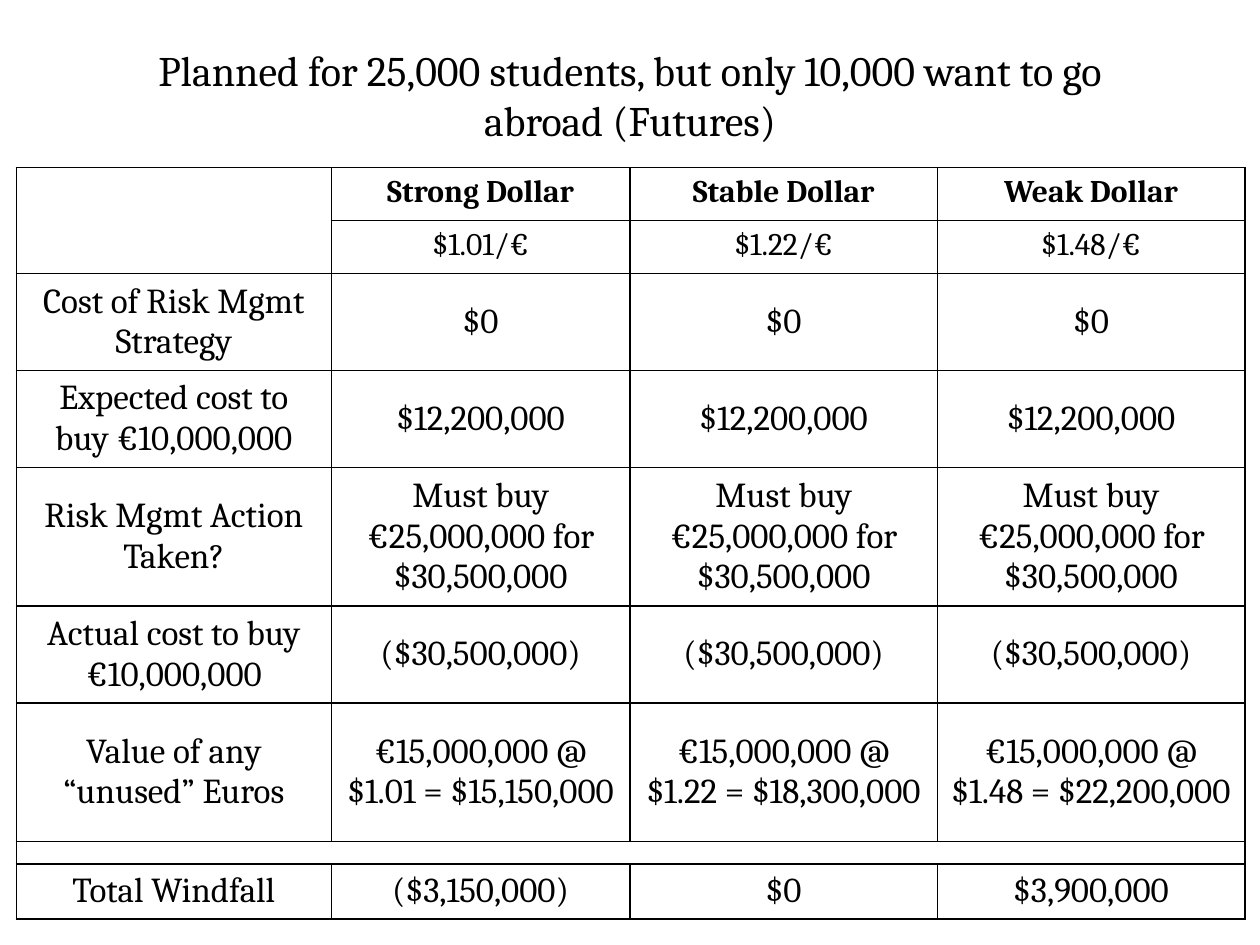
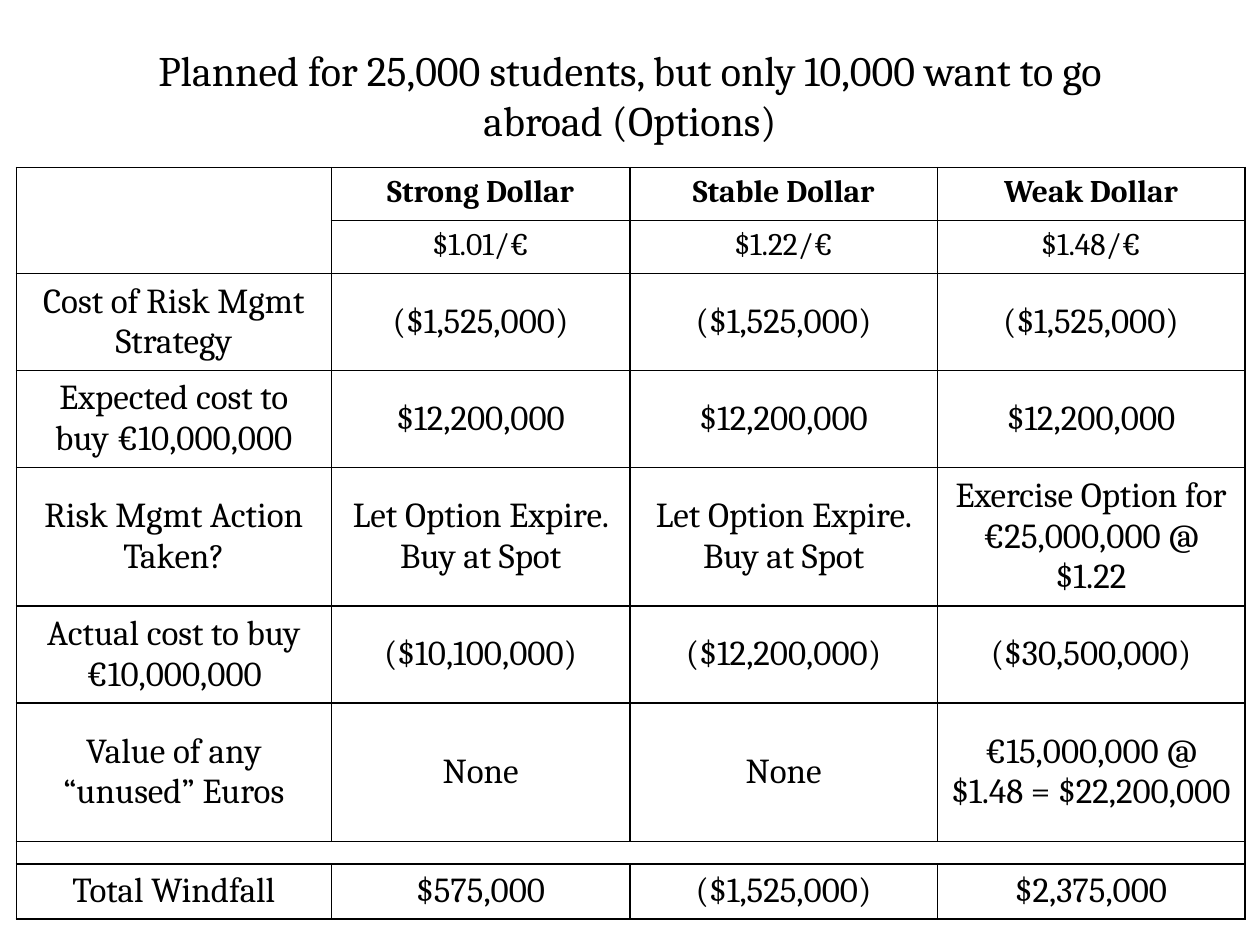
from lxml import etree
from pptx import Presentation
from pptx.dml.color import RGBColor
from pptx.enum.text import MSO_ANCHOR, PP_ALIGN
from pptx.oxml.ns import qn
from pptx.util import Inches, Pt

CENTER = PP_ALIGN.CENTER
TOP, MIDDLE = MSO_ANCHOR.TOP, MSO_ANCHOR.MIDDLE
FONT = "Cambria"
COLORS = {"ink": "000000", "page": "FFFFFF"}

# Table grid, in inches
COLS = [2.5, 2.37, 2.44, 2.44]
ROWS = [0.42, 0.42, 0.77, 0.77, 1.1, 0.77, 1.1, 0.18, 0.43]
GAP_ROW = 7

# Rows that both slides share
HEADS = [
    ["", "Strong Dollar", "Stable Dollar", "Weak Dollar"],
    ["", "$1.01/€", "$1.22/€", "$1.48/€"],
]
LABELS = [
    "Cost of Risk Mgmt Strategy",
    "Expected cost to buy €10,000,000",
    "Risk Mgmt Action Taken?",
    "Actual cost to buy €10,000,000",
    "Value of any “unused” Euros",
    "",
    "Total Windfall",
]
PLANNED = ["$12,200,000"] * 3
BLANK = [""] * 3

# Outcomes per hedge: one row per label
HEDGES = {
    "Futures": [
        ["$0"] * 3,
        PLANNED,
        ["Must buy €25,000,000 for $30,500,000"] * 3,
        ["($30,500,000)"] * 3,
        ["€15,000,000 @ $1.01 = $15,150,000",
         "€15,000,000 @ $1.22 = $18,300,000",
         "€15,000,000 @ $1.48 = $22,200,000"],
        BLANK,
        ["($3,150,000)", "$0", "$3,900,000"],
    ],
    "Options": [
        ["($1,525,000)"] * 3,
        PLANNED,
        ["Let Option Expire. Buy at Spot",
         "Let Option Expire. Buy at Spot",
         "Exercise Option for €25,000,000 @ $1.22"],
        ["($10,100,000)", "($12,200,000)", "($30,500,000)"],
        ["None", "None", "€15,000,000 @ $1.48 = $22,200,000"],
        BLANK,
        ["$575,000", "($1,525,000)", "$2,375,000"],
    ],
}


def write(frame, text, size=20, bold=False, color="ink"):
    """Put one centred run of text in a frame."""
    frame.word_wrap = True
    para = frame.paragraphs[0]
    para.alignment = CENTER
    run = para.add_run()
    run.text = text
    font = run.font
    font.name, font.size, font.bold = FONT, Pt(size), bold
    font.color.rgb = RGBColor.from_string(COLORS[color])


def add_title(slide, text):
    box = slide.shapes.add_textbox(Inches(0.75), Inches(0.25),
                                   Inches(8.5), Inches(1))
    box.text_frame.vertical_anchor = MIDDLE
    write(box.text_frame, text, size=24)


def add_border(cell, width=1):
    """Draw all four edges of a cell."""
    props = cell._tc.get_or_add_tcPr()
    for side in ("lnL", "lnR", "lnT", "lnB"):
        line = etree.SubElement(props, qn("a:" + side), w=str(Pt(width)))
        fill = etree.SubElement(line, qn("a:solidFill"))
        etree.SubElement(fill, qn("a:srgbClr"), val=COLORS["ink"])


def shrink(cell):
    """Keep an empty cell from stretching its row."""
    para = cell.text_frame.paragraphs[0]._p
    etree.SubElement(para, qn("a:endParaRPr"), sz="400")


def add_grid(slide, rows):
    frame = slide.shapes.add_table(
        len(ROWS), len(COLS), Inches(0.13), Inches(1.33),
        Inches(sum(COLS)), Inches(sum(ROWS)))
    table = frame.table
    table.first_row = table.horz_banding = False
    for col, width in zip(table.columns, COLS):
        col.width = Inches(width)
    for row, height in zip(table.rows, ROWS):
        row.height = Inches(height)

    # Cells
    for r, texts in enumerate(rows):
        head = r < len(HEADS)
        for c, text in enumerate(texts):
            cell = table.cell(r, c)
            cell.vertical_anchor = TOP if head else MIDDLE
            add_border(cell)
            cell.fill.background()
            if text:
                write(cell.text_frame, text, size=18 if head else 20,
                      bold=r == 0)
            else:
                shrink(cell)

    # Empty corner and gap above the total
    table.cell(0, 0).merge(table.cell(1, 0))
    table.cell(GAP_ROW, 0).merge(table.cell(GAP_ROW, len(COLS) - 1))


def add_page(deck, hedge, values):
    slide = deck.slides.add_slide(deck.slide_layouts[6])
    fill = slide.background.fill
    fill.solid()
    fill.fore_color.rgb = RGBColor.from_string(COLORS["page"])
    add_title(slide, "Planned for 25,000 students, but only 10,000 "
                     f"want to go abroad ({hedge})")
    body = [[label, *row] for label, row in zip(LABELS, values)]
    add_grid(slide, HEADS + body)


def main():
    deck = Presentation()
    deck.slide_width, deck.slide_height = Inches(10), Inches(7.5)
    for hedge, values in HEDGES.items():
        add_page(deck, hedge, values)
    deck.save("out.pptx")


if __name__ == "__main__":
    main()
